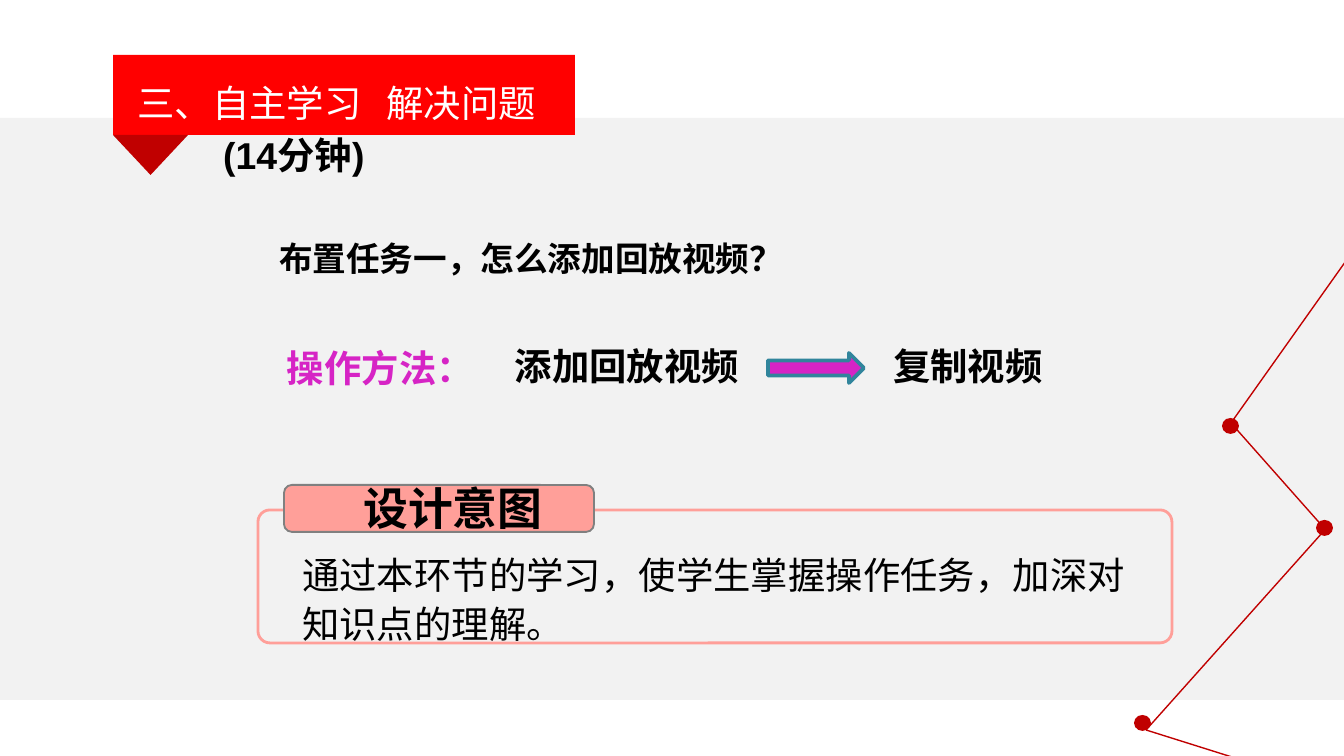
import pptx
import pptx.dml.color
import pptx.enum.shapes
import pptx.enum.text
import pptx.oxml
import pptx.oxml.ns
import pptx.util

RGB = pptx.dml.color.RGBColor
SHAPE = pptx.enum.shapes.MSO_SHAPE
ALIGN = pptx.enum.text.PP_ALIGN

BLACK = RGB(0x00, 0x00, 0x00)
WHITE = RGB(0xFF, 0xFF, 0xFF)
PALE_GREY = RGB(0xF2, 0xF2, 0xF2)
MID_GREY = RGB(0x80, 0x80, 0x80)
RED = RGB(0xFF, 0x00, 0x00)
DARK_RED = RGB(0xC0, 0x00, 0x00)
SALMON = RGB(0xFF, 0x9F, 0x99)
MAGENTA = RGB(0xD6, 0x24, 0xC5)
TEAL = RGB(0x31, 0x85, 0x9C)

CJK = "Noto Sans CJK SC"
PX_PER_INCH = 134.4


def px(length):
    return pptx.util.Emu(round(length * 914400 / PX_PER_INCH))


def add_child(parent, tag, **attributes):
    child = pptx.oxml.ns.qn(tag)
    element = parent.makeelement(child, attributes)
    parent.append(element)
    return element


def add_block(slide, kind, box, fill, line=None, width=1, corner=None):
    block = slide.shapes.add_shape(kind, *map(px, box))
    block.shadow.inherit = False
    block.fill.solid()
    block.fill.fore_color.rgb = fill
    if line is None:
        block.line.fill.background()
    else:
        block.line.color.rgb = line
        block.line.width = pptx.util.Pt(width)
    if corner is not None:
        block.adjustments[0] = corner
    return block


def add_segment(slide, start, end):
    segment = slide.shapes.add_connector(
        pptx.enum.shapes.MSO_CONNECTOR.STRAIGHT, *map(px, start + end))
    segment.line.color.rgb = DARK_RED
    segment.line.width = pptx.util.Pt(0.75)
    add_child(segment._element.spPr, "a:effectLst")


def write(shape, text, size=20, color=BLACK, font=CJK, bold=True,
          align=ALIGN.LEFT, spacing=None, tab=None):
    """Put one formatted paragraph in a shape; tab is a stop in px."""
    frame = shape.text_frame
    frame.word_wrap = True
    frame.auto_size = pptx.enum.text.MSO_AUTO_SIZE.NONE
    frame.vertical_anchor = pptx.enum.text.MSO_ANCHOR.TOP
    paragraph = frame.paragraphs[0]
    paragraph.alignment = align
    paragraph.space_before = pptx.util.Pt(0)
    paragraph.line_spacing = spacing or 1.0
    if tab:
        stops = add_child(paragraph._p.get_or_add_pPr(), "a:tabLst")
        add_child(stops, "a:tab", pos=str(px(tab)), algn="l")
    run = paragraph.add_run()
    run.text = text
    run.font.size = pptx.util.Pt(size)
    run.font.bold = bold
    run.font.color.rgb = color
    run.font.name = font
    add_child(run._r.get_or_add_rPr(), "a:ea", typeface=CJK)


def add_text(slide, box, text, **style):
    write(slide.shapes.add_textbox(*map(px, box)), text, **style)


def add_zigzag(slide):
    """Red thread with dots along the right edge."""
    corner, foot = (1231, 423), (1146, 730)
    for start, end in (((1392, 196), corner), (corner, (1324, 528)),
                       ((1331, 523), foot), (foot, (1359, 797))):
        add_segment(slide, start, end)
    for left, top in ((1222, 418), (1316, 520), (1134, 715)):
        add_block(slide, SHAPE.OVAL, (left, top, 17, 16), DARK_RED)


def add_heading(slide):
    add_text(slide, (210, 146, 618, 38), "(14分钟)", font="Arial",
             spacing=pptx.util.Pt(13))
    add_block(slide, SHAPE.RECTANGLE, (113, 55, 462, 80), RED)
    fold = add_block(slide, SHAPE.ISOSCELES_TRIANGLE, (113, 135, 75, 40),
                     DARK_RED)
    fold.rotation = 180
    title = slide.shapes.title
    title.left, title.top, title.width, title.height = map(
        px, (124, 73, 437, 59))
    write(title, "三、自主学习\t解决问题", color=WHITE, bold=False, tab=249)
    slide.shapes._spTree.append(title._element)  # in front of the ribbon


def add_task(slide):
    add_text(slide, (266, 227, 550, 58), "布置任务一，怎么添加回放视频？",
             size=18, spacing=1.1)
    for box, step, color in (
            ((263, 339, 235, 59), "操作方法：", MAGENTA),
            ((480, 337, 294, 59), "添加回放视频", BLACK),
            ((821, 337, 294, 59), "复制视频", BLACK)):
        add_text(slide, box, step, color=color, align=ALIGN.CENTER)
    add_block(slide, SHAPE.RIGHT_ARROW, (768, 353, 96, 30), MAGENTA,
              line=TEAL, width=2)


def add_intent(slide):
    add_block(slide, SHAPE.ROUNDED_RECTANGLE, (258, 510, 914, 133),
              PALE_GREY, line=SALMON, width=1.5, corner=0.09)
    add_text(slide, (289, 542, 883, 112),
             "通过本环节的学习，使学生掌握操作任务，加深对知识点的理解。",
             font="Arial", bold=False, spacing=pptx.util.Pt(26))
    add_block(slide, SHAPE.ROUNDED_RECTANGLE, (284, 485, 310, 47),
              SALMON, line=MID_GREY, corner=0.17)
    add_text(slide, (285, 474, 336, 67), "设计意图", size=24,
             align=ALIGN.CENTER)


def main():
    deck = pptx.Presentation()
    deck.slide_width, deck.slide_height = px(1344), px(756)
    slide = deck.slides.add_slide(deck.slide_layouts.get_by_name("Title Only"))
    add_block(slide, SHAPE.RECTANGLE, (0, 118, 1344, 582), PALE_GREY)
    add_zigzag(slide)
    add_heading(slide)
    add_task(slide)
    add_intent(slide)
    deck.save("out.pptx")


if __name__ == "__main__":
    main()
